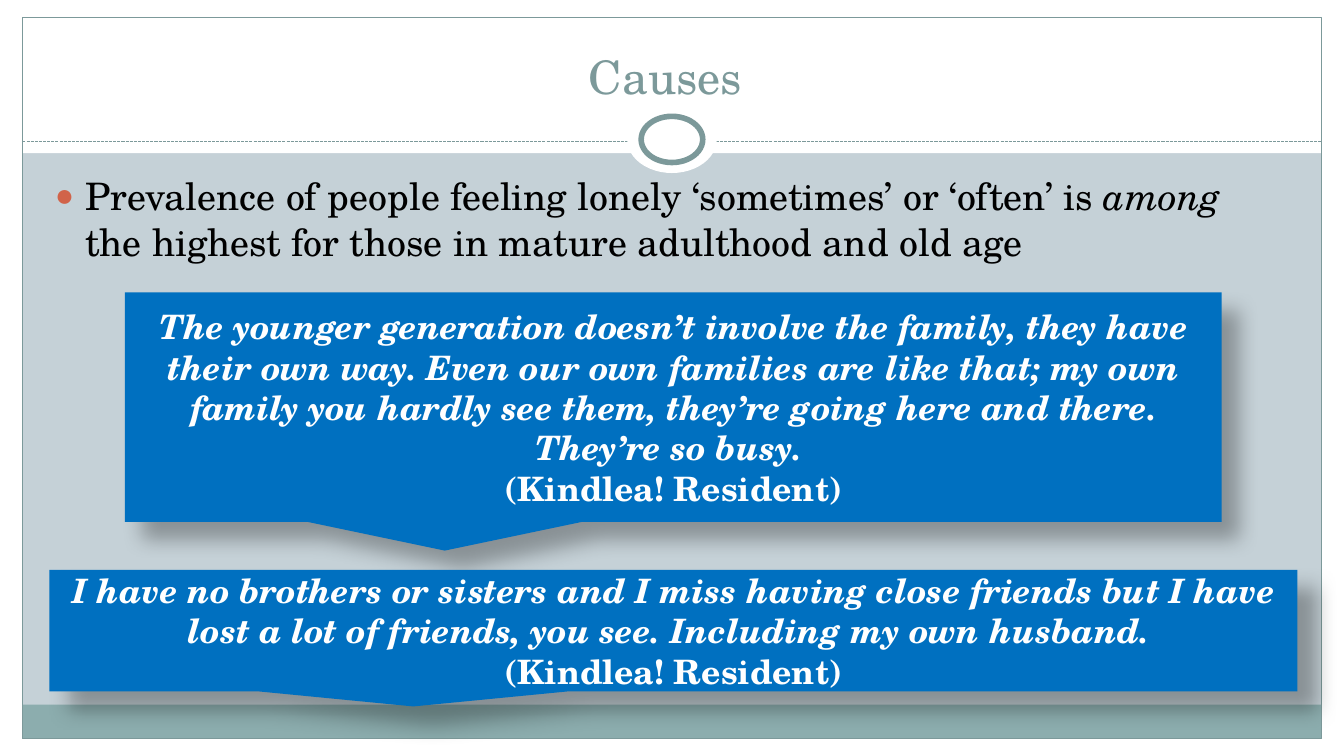
import pptx
import pptx.dml.color
import pptx.enum.dml
import pptx.enum.shapes
import pptx.enum.text
import pptx.oxml
import pptx.oxml.ns
import pptx.util

Pt = pptx.util.Pt
RGBColor = pptx.dml.color.RGBColor
PP_ALIGN = pptx.enum.text.PP_ALIGN
MSO_ANCHOR = pptx.enum.text.MSO_ANCHOR
MSO_SHAPE = pptx.enum.shapes.MSO_SHAPE

FONT = "TeX Gyre Schola"
WHITE = RGBColor(0xFF, 0xFF, 0xFF)
BLACK = RGBColor(0, 0, 0)
BACKGROUND = RGBColor(0xC5, 0xD1, 0xD7)
SAGE = RGBColor(0x7C, 0x99, 0x9A)
FOOTER = RGBColor(0x8C, 0xAD, 0xAE)
BULLET = RGBColor(0xD1, 0x63, 0x49)
BLUE = RGBColor(0x00, 0x70, 0xC0)

WIDTH, HEIGHT = 960, 540
MARGIN_X, MARGIN_Y = 16, 12.2
HEADER_HEIGHT = 109.4
RULE_Y = 100.8

RESIDENT = "(Kindlea! Resident)"
FAMILY_QUOTE = (
    "The younger generation doesn’t involve the family, they have their own way. "
    "Even our own families are like that; my own family you hardly see them, "
    "they’re going here and there. They’re so busy. "
)
FRIENDS_QUOTE = (
    "I have no brothers or sisters and I miss having close friends but I have "
    "lost a lot of friends, you see. Including my own husband. "
)


def parse_drawing(markup):
    """Return a DrawingML element parsed from markup that uses the a prefix."""
    namespace = pptx.oxml.ns.nsdecls("a")
    return pptx.oxml.parse_xml(f"<a:wrapper {namespace}>{markup}</a:wrapper>")[0]


def add_text(paragraph, text, size, color, bold=False, italic=False):
    """Add a formatted run to a paragraph."""
    run = paragraph.add_run()
    run.text = text
    font = run.font
    font.name, font.size, font.bold, font.italic = FONT, Pt(size), bold, italic
    font.color.rgb = color


def add_box(slide, kind, box, fill=None, line=None, line_width=0.75):
    """Add a preset shape without a shadow in a box of left, top, width, height."""
    shape = slide.shapes.add_shape(kind, *map(Pt, box))
    shape.shadow.inherit = False
    if fill is None:
        shape.fill.background()
    else:
        shape.fill.solid()
        shape.fill.fore_color.rgb = fill
    if line is None:
        shape.line.fill.background()
    else:
        shape.line.color.rgb = line
        shape.line.width = Pt(line_width)
    return shape


def place_placeholder(placeholder, box, anchor):
    """Move a placeholder to the front and into its box, and return its text frame."""
    placeholder.element.getparent().append(placeholder.element)
    placeholder.left, placeholder.top, placeholder.width, placeholder.height = map(Pt, box)
    frame = placeholder.text_frame
    frame.auto_size = pptx.enum.text.MSO_AUTO_SIZE.NONE
    frame.word_wrap = True
    frame.vertical_anchor = anchor
    return frame


def draw_frame(slide, box):
    """Draw the white margins, header, footer band and outline around the box."""
    left, top, width, height = box
    right, bottom = left + width, top + height
    footer_height = 24.5
    for margin in (
        (0, bottom, WIDTH, HEIGHT - bottom),
        (0, 0, WIDTH, HEADER_HEIGHT),
        (0, 0, left, HEIGHT),
        (right, 0, WIDTH - right, HEIGHT),
    ):
        add_box(slide, MSO_SHAPE.RECTANGLE, margin, fill=WHITE)
    footer = (left, bottom - footer_height, width, footer_height)
    add_box(slide, MSO_SHAPE.RECTANGLE, footer, fill=FOOTER)
    add_box(slide, MSO_SHAPE.RECTANGLE, box, line=SAGE)


def draw_rule(slide, left, right, y):
    """Draw the dashed rule with a ring at its centre."""
    rule = slide.shapes.add_connector(
        pptx.enum.shapes.MSO_CONNECTOR.STRAIGHT, Pt(left), Pt(y), Pt(right), Pt(y)
    )
    rule.line.color.rgb = SAGE
    rule.line.width = Pt(0.75)
    rule.line.dash_style = pptx.enum.dml.MSO_LINE.SQUARE_DOT
    rule.element.spPr.append(parse_drawing("<a:effectLst/>"))
    center, ring_y = (left + right) / 2, y - 1.2
    for width, height, line in ((64, 48, None), (44, 33, SAGE)):
        box = (center - width / 2, ring_y - height / 2, width, height)
        add_box(slide, MSO_SHAPE.OVAL, box, fill=WHITE, line=line, line_width=4)


def fill_title(slide, box):
    """Write the slide title."""
    frame = place_placeholder(slide.shapes.title, box, MSO_ANCHOR.BOTTOM)
    paragraph = frame.paragraphs[0]
    paragraph.alignment = PP_ALIGN.CENTER
    add_text(paragraph, "Causes ", size=33, color=SAGE)


def fill_body(slide, box):
    """Write the bulleted statement."""
    frame = place_placeholder(slide.placeholders[1], box, MSO_ANCHOR.TOP)
    paragraph = frame.paragraphs[0]
    paragraph.space_before = Pt(5.4)
    properties = paragraph._p.get_or_add_pPr()
    properties.set("marL", str(Pt(21.6)))
    properties.set("indent", str(Pt(-21.6)))
    for markup in (
        f'<a:buClr><a:srgbClr val="{BULLET}"/></a:buClr>',
        '<a:buSzPct val="85000"/>',
        '<a:buChar char="●"/>',
    ):
        properties.append(parse_drawing(markup))
    for text, italic in (
        ("Prevalence of people feeling lonely ‘sometimes’ or ‘often’ is ", False),
        ("among ", True),
        ("the highest for those in mature adulthood and old age", False),
    ):
        add_text(paragraph, text, size=27, color=BLACK, italic=italic)


def draw_quote(slide, box, quote):
    """Draw a shadowed callout holding a quote and its speaker."""
    callout = add_box(slide, MSO_SHAPE.RECTANGULAR_CALLOUT, box, fill=BLUE)
    effects = callout.element.spPr.find(pptx.oxml.ns.qn("a:effectLst"))
    effects.append(parse_drawing(
        f'<a:outerShdw blurRad="{Pt(15)}" dist="{Pt(18)}" dir="2700000" algn="tl" rotWithShape="0">'
        f'<a:srgbClr val="{BLACK}"><a:alpha val="30000"/></a:srgbClr></a:outerShdw>'
    ))
    frame = callout.text_frame
    frame.word_wrap = True
    frame.vertical_anchor = MSO_ANCHOR.MIDDLE
    paragraphs = frame.paragraphs[0], frame.add_paragraph()
    for paragraph, text, italic in zip(paragraphs, (quote, RESIDENT), (True, False)):
        paragraph.alignment = PP_ALIGN.CENTER
        add_text(paragraph, text, size=24, color=WHITE, bold=True, italic=italic)


def build_causes_slide(presentation):
    """Add the slide about the causes of loneliness."""
    slide = presentation.slides.add_slide(presentation.slide_layouts[1])
    slide.background.fill.solid()
    slide.background.fill.fore_color.rgb = BACKGROUND
    inner_width, inner_height = WIDTH - 2 * MARGIN_X, HEIGHT - 2 * MARGIN_Y
    draw_frame(slide, (MARGIN_X, MARGIN_Y, inner_width, inner_height))
    draw_rule(slide, MARGIN_X, WIDTH - MARGIN_X, RULE_Y)
    fill_title(slide, (32, 18, 896, 60))
    fill_body(slide, (32, 120, 893, 360))
    draw_quote(slide, (89.2, 208.8, 783.5, 164), FAMILY_QUOTE)
    draw_quote(slide, (35.2, 407, 891.4, 86.8), FRIENDS_QUOTE)


def main():
    """Build and save the presentation."""
    presentation = pptx.Presentation()
    presentation.slide_width, presentation.slide_height = Pt(WIDTH), Pt(HEIGHT)
    build_causes_slide(presentation)
    presentation.save("out.pptx")


if __name__ == "__main__":
    main()
